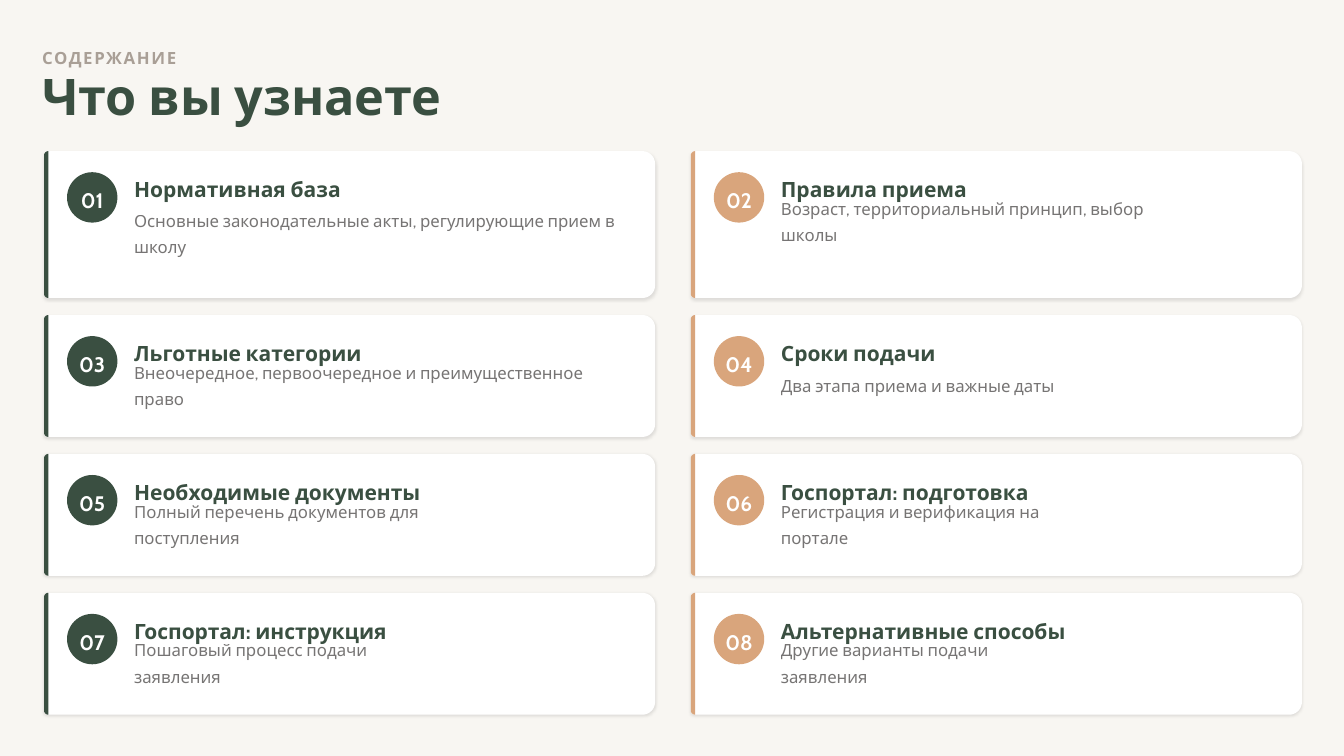
import dataclasses
import math

import lxml.etree
import pptx
import pptx.dml.color
import pptx.enum.shapes
import pptx.enum.text
import pptx.oxml.ns
import pptx.util

Cm = pptx.util.Cm
Pt = pptx.util.Pt
qn = pptx.oxml.ns.qn


@dataclasses.dataclass(frozen=True)
class Theme:
    font: str = "Cabin"
    background: str = "F8F6F2"
    green: str = "3A4F41"
    sand: str = "D9A57C"
    white: str = "FFFFFF"
    muted: str = "A99F96"
    ink: str = "3D3A39"
    shadow: str = "000000"
    heading_size: int = 36
    title_size: int = 15
    body_size: int = 12


THEME = Theme()

# Title, description, width of the text column in cm
TOPICS = [
    ("Нормативная база", "Основные законодательные акты, регулирующие прием в школу", 12.8),
    ("Правила приема", "Возраст, территориальный принцип, выбор школы", 10.57),
    ("Льготные категории", "Внеочередное, первоочередное и преимущественное право", 12.52),
    ("Сроки подачи", "Два этапа приема и важные даты", 7.01),
    ("Необходимые документы", "Полный перечень документов для поступления", 9.86),
    ("Госпортал: подготовка", "Регистрация и верификация на портале", 8.28),
    ("Госпортал: инструкция", "Пошаговый процесс подачи заявления", 8.1),
    ("Альтернативные способы", "Другие варианты подачи заявления", 7.49),
]
ROW_HEIGHTS = [3.7, 3.07, 3.07, 3.07]
ROW_GAP = 0.43
COLUMN_WIDTH = 15.4
COLUMN_PITCH = 16.3
SMALL_RADIUS = 0.11
LARGE_RADIUS = 0.32


def rgb(color):
    return pptx.dml.color.RGBColor.from_string(color)


def add_alpha(color_element, percent):
    alpha = lxml.etree.SubElement(color_element, qn("a:alpha"))
    alpha.set("val", str(percent * 1000))


def write(shape, text, size, color, spacing, bold=True, centred=False):
    """Fill the shape with one vertically centred paragraph and return it."""
    frame = shape.text_frame
    frame.margin_left = frame.margin_right = frame.margin_top = frame.margin_bottom = 0
    frame.vertical_anchor = pptx.enum.text.MSO_ANCHOR.MIDDLE
    frame.word_wrap = not centred
    para = frame.paragraphs[0]
    para.text = text
    para.line_spacing = spacing
    align = pptx.enum.text.PP_ALIGN
    para.alignment = align.CENTER if centred else align.LEFT
    para.font.name = THEME.font
    para.font.size = Pt(size)
    para.font.bold = bold
    para.font.color.rgb = rgb(color)
    return para


def add_text(page, left, top, width, height, *style, **options):
    box = page.shapes.add_textbox(Cm(left), Cm(top), Cm(width), Cm(height))
    return write(box, *style, **options)


def paint(shape, color):
    shape.shadow.inherit = False
    shape.fill.solid()
    shape.fill.fore_color.rgb = rgb(color)
    shape.line.fill.background()


def corner(x, y, radius, start):
    """Points of a quarter circle around (x, y), clockwise from start degrees."""
    angles = [math.radians(start + step * 9) for step in range(11)]
    return [(Cm(x + radius * math.cos(a)), Cm(y + radius * math.sin(a))) for a in angles]


def add_panel(page, left, top, width, height, right_radius, color):
    """Add a box with small left corners and the given right corners."""
    right, bottom, small = left + width, top + height, SMALL_RADIUS
    points = (
        corner(right - right_radius, top + right_radius, right_radius, 270)
        + corner(right - right_radius, bottom - right_radius, right_radius, 0)
        + corner(left + small, bottom - small, small, 90)
        + corner(left + small, top + small, small, 180)
    )
    outline = page.shapes.build_freeform(*points[0])
    outline.add_line_segments(points[1:], close=True)
    panel = outline.convert_to_shape()
    paint(panel, color)
    return panel


def add_soft_shadow(shape):
    effects = shape._element.spPr.find(qn("a:effectLst"))
    shadow = lxml.etree.SubElement(effects, qn("a:outerShdw"))
    for name, value in (("blurRad", Pt(2.2)), ("dist", Pt(0.8)), ("dir", 90 * 60000)):
        shadow.set(name, str(int(value)))
    color = lxml.etree.SubElement(shadow, qn("a:srgbClr"))
    color.set("val", THEME.shadow)
    add_alpha(color, 10)


def add_heading(page, left, top, width):
    label = add_text(page, left, top, width, 0.64,
                     "СОДЕРЖАНИЕ", THEME.body_size, THEME.muted, 1.3)
    label.font._element.set("spc", "120")
    add_text(page, left, top + 0.84, width, 1.27,
             "Что вы узнаете", THEME.heading_size, THEME.green, 0.8)


def add_card(page, left, top, width, height, number, topic, accent):
    title, description, text_width = topic
    add_soft_shadow(add_panel(page, left, top, width, height, LARGE_RADIUS, THEME.white))
    add_panel(page, left, top, SMALL_RADIUS, height, 0, accent)

    badge = page.shapes.add_shape(pptx.enum.shapes.MSO_SHAPE.OVAL,
                                  Cm(left + 0.58), Cm(top + 0.53), Cm(1.27), Cm(1.27))
    paint(badge, accent)
    write(badge, f"{number:02}", THEME.title_size, THEME.white, 1.2, centred=True)

    text_left = left + 2.27
    add_text(page, text_left, top + 0.53, text_width, 0.74,
             title, THEME.title_size, THEME.green, 1.2)
    description_height = 1.27 if number == 1 else 0.64
    para = add_text(page, text_left, top + 1.38, text_width, description_height,
                    description, THEME.body_size, THEME.ink, 1.3, bold=False)
    add_alpha(para.font._element.find(".//" + qn("a:srgbClr")), 70)


def add_contents(page, left, top):
    accents = [THEME.green, THEME.sand]
    for index, topic in enumerate(TOPICS):
        row, column = divmod(index, len(accents))
        card_top = top + sum(ROW_HEIGHTS[:row]) + row * ROW_GAP
        add_card(page, left + column * COLUMN_PITCH, card_top, COLUMN_WIDTH,
                 ROW_HEIGHTS[row], index + 1, topic, accents[column])


def main():
    deck = pptx.Presentation()
    deck.slide_width, deck.slide_height = Cm(33.87), Cm(19.05)
    page = deck.slides.add_slide(deck.slide_layouts[6])
    page.background.fill.solid()
    page.background.fill.fore_color.rgb = rgb(THEME.background)
    add_heading(page, 1.06, 1.06, 32)
    add_contents(page, 1.11, 3.81)
    deck.save("out.pptx")


if __name__ == "__main__":
    main()
